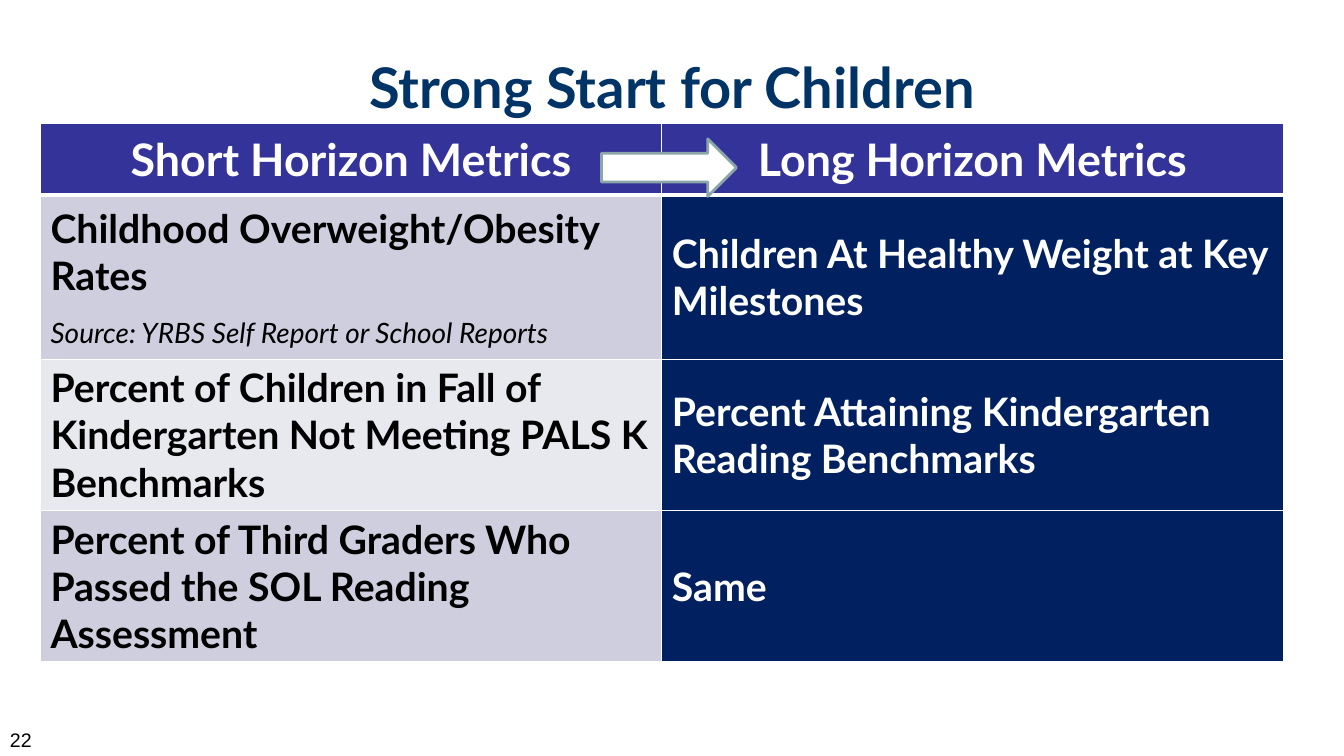
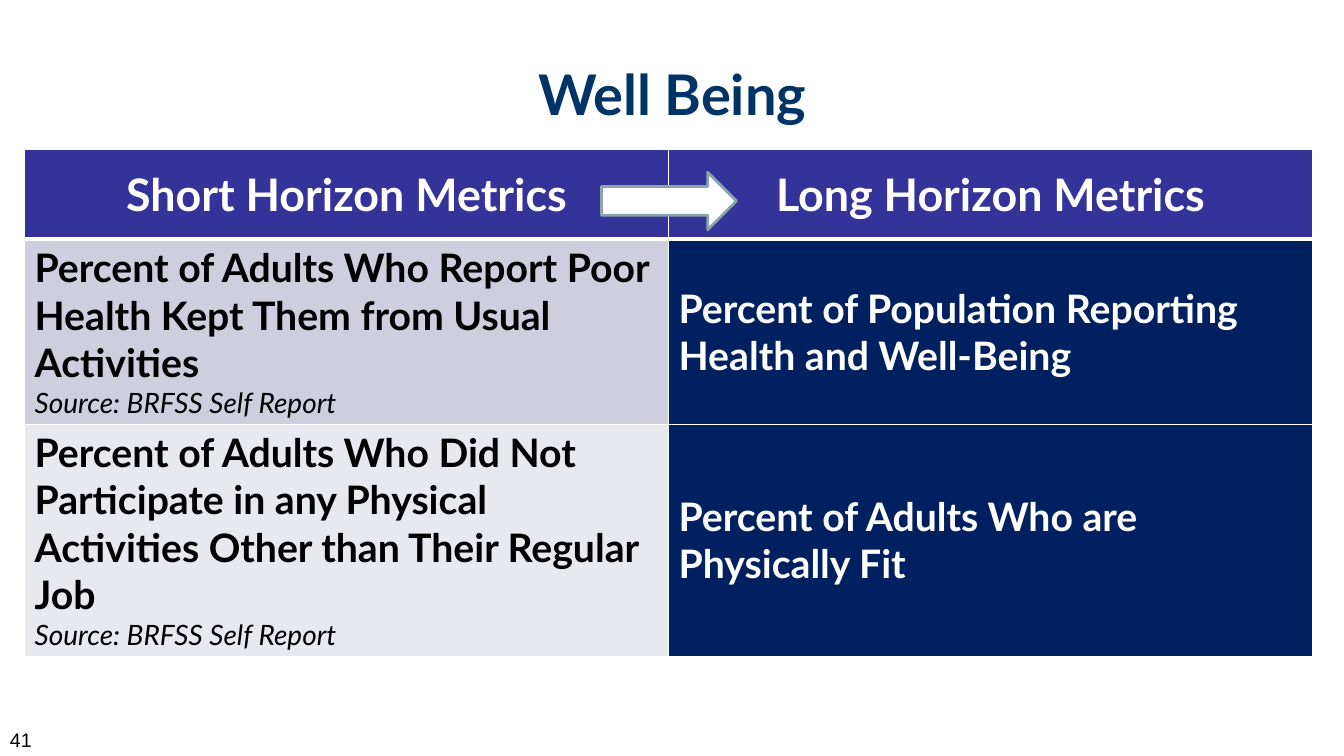
"""Build two slides that pair short and long horizon metrics."""
from dataclasses import dataclass

from lxml.etree import SubElement
from pptx import Presentation
from pptx.dml.color import RGBColor
from pptx.enum.shapes import MSO_SHAPE
from pptx.enum.text import MSO_ANCHOR, PP_ALIGN
from pptx.oxml.ns import qn
from pptx.slide import Slide
from pptx.table import _Cell
from pptx.text.text import TextFrame
from pptx.util import Cm, Pt

WHITE, BLACK = "FFFFFF", "000000"
TITLE_BLUE, HEADER_BLUE, LONG_BLUE = "003366", "333399", "002060"
SHORT_FILLS = ("CECEDE", "E8E8EF")
ARROW_EDGE = "8AA6A8"
HEADERS = ("Short Horizon Metrics", "Long Horizon Metrics")

TITLE = {"name": "Lato", "size": Pt(40), "bold": True}
HEADER = {"name": "Lato", "size": Pt(32), "bold": True}
METRIC = {"name": "Lato", "size": Pt(28), "bold": True}
SOURCE = {"name": "Lato", "size": Pt(20), "bold": False, "italic": True}
NUMBER = {"name": "Arial", "size": Pt(14)}


@dataclass(frozen=True)
class Metric:
    """A short horizon metric, its long horizon partner and its source."""

    short: str
    long: str
    height: float
    source: str = ""


@dataclass(frozen=True)
class MetricPage:
    """The content of one slide, with lengths in centimetres."""

    title: str
    number: str
    title_top: float
    table_left: float
    table_top: float
    column_width: float
    header_height: float
    arrow_top: float
    source_gap: int
    metrics: tuple[Metric, ...]


PAGES = (
    MetricPage("Strong Start for Children", "22", 0.58, 1.02, 3.12, 15.66, 1.8, 3.5, 12, (
        Metric("Childhood Overweight/Obesity Rates",
               "Children At Healthy Weight at Key Milestones", 4.13,
               "Source: YRBS Self Report or School Reports"),
        Metric("Percent of Children in Fall of Kindergarten Not Meeting PALS K Benchmarks",
               "Percent Attaining Kindergarten Reading Benchmarks", 3.81),
        Metric("Percent of Third Graders Who Passed the SOL Reading Assessment",
               "Same", 3.81),
    )),
    MetricPage("Well Being", "41", 0.76, 0.62, 3.77, 16.23, 2.26, 4.34, 0, (
        Metric("Percent of Adults Who Report Poor Health Kept Them from Usual Activities",
               "Percent of Population Reporting Health and Well-Being", 4.66,
               "Source: BRFSS Self Report"),
        Metric("Percent of Adults Who Did Not Participate in any Physical Activities "
               "Other than Their Regular Job",
               "Percent of Adults Who are Physically Fit", 5.84,
               "Source: BRFSS Self Report"),
    )),
)


def color(value: str) -> RGBColor:
    """Turn a hex string into a colour."""
    return RGBColor.from_string(value)


def write(frame: TextFrame, text: str, style: dict, ink: str,
          align: PP_ALIGN = PP_ALIGN.LEFT, gap: int = 0) -> None:
    """Write a paragraph, adding one when the frame already holds text."""
    paragraph = frame.add_paragraph() if frame.text else frame.paragraphs[0]
    paragraph.alignment = align
    paragraph.space_before = Pt(gap)
    span = paragraph.add_run()
    span.text = text
    for name, value in style.items():
        setattr(span.font, name, value)
    span.font.color.rgb = color(ink)


def add_text(page: Slide, left: float, top: float, width: float, height: float,
             anchor: MSO_ANCHOR) -> TextFrame:
    """Add a wrapping text box and return its frame."""
    box = page.shapes.add_textbox(Cm(left), Cm(top), Cm(width), Cm(height))
    box.text_frame.word_wrap = True
    box.text_frame.vertical_anchor = anchor
    return box.text_frame


def format_cell(cell: _Cell, fill: str, top: int = 1, bottom: int = 1) -> None:
    """Give a cell white borders, a solid fill and centred height."""
    properties = cell._tc.get_or_add_tcPr()
    for side, points in {"L": 1, "R": 1, "T": top, "B": bottom}.items():
        line = SubElement(properties, qn(f"a:ln{side}"), w=str(Pt(points)))
        solid = SubElement(line, qn("a:solidFill"))
        SubElement(solid, qn("a:srgbClr"), val=WHITE)
    cell.fill.solid()
    cell.fill.fore_color.rgb = color(fill)
    cell.vertical_anchor = MSO_ANCHOR.MIDDLE


def add_metrics(page: Slide, content: MetricPage) -> None:
    """Add the table of paired metrics."""
    heights = [content.header_height, *(metric.height for metric in content.metrics)]
    table = page.shapes.add_table(
        len(heights), len(HEADERS), Cm(content.table_left), Cm(content.table_top),
        Cm(content.column_width * len(HEADERS)), Cm(sum(heights))).table
    for row, height in zip(table.rows, heights):
        row.height = Cm(height)
    for index, header in enumerate(HEADERS):
        table.columns[index].width = Cm(content.column_width)
        cell = table.cell(0, index)
        format_cell(cell, HEADER_BLUE, bottom=3)
        write(cell.text_frame, header, HEADER, WHITE, PP_ALIGN.CENTER)
    for index, metric in enumerate(content.metrics):
        short, long = table.cell(index + 1, 0), table.cell(index + 1, 1)
        top = 1 if index else 3
        format_cell(short, SHORT_FILLS[index % 2], top)
        write(short.text_frame, metric.short, METRIC, BLACK)
        if metric.source:
            write(short.text_frame, metric.source, SOURCE, BLACK, gap=content.source_gap)
        format_cell(long, LONG_BLUE, top)
        write(long.text_frame, metric.long, METRIC, WHITE)


def add_arrow(page: Slide, top: float) -> None:
    """Add the arrow that leads from short to long horizon."""
    arrow = page.shapes.add_shape(
        MSO_SHAPE.RIGHT_ARROW, Cm(15.16), Cm(top), Cm(3.4), Cm(1.45))
    arrow.shadow.inherit = False
    arrow.fill.solid()
    arrow.fill.fore_color.rgb = color(WHITE)
    arrow.line.color.rgb = color(ARROW_EDGE)
    arrow.line.width = Pt(2)


def main() -> None:
    """Build and save the deck."""
    deck = Presentation()
    deck.slide_width, deck.slide_height = Cm(33.87), Cm(19.05)
    for content in PAGES:
        page = deck.slides.add_slide(deck.slide_layouts[6])
        number = add_text(page, 0, 18.21, 7.9, 0.64, MSO_ANCHOR.TOP)
        write(number, content.number, NUMBER, BLACK)
        title = add_text(page, 1.7, content.title_top, 30.48, 3.18, MSO_ANCHOR.MIDDLE)
        write(title, content.title, TITLE, TITLE_BLUE, PP_ALIGN.CENTER)
        add_metrics(page, content)
        add_arrow(page, content.arrow_top)
    deck.save("out.pptx")


if __name__ == "__main__":
    main()
